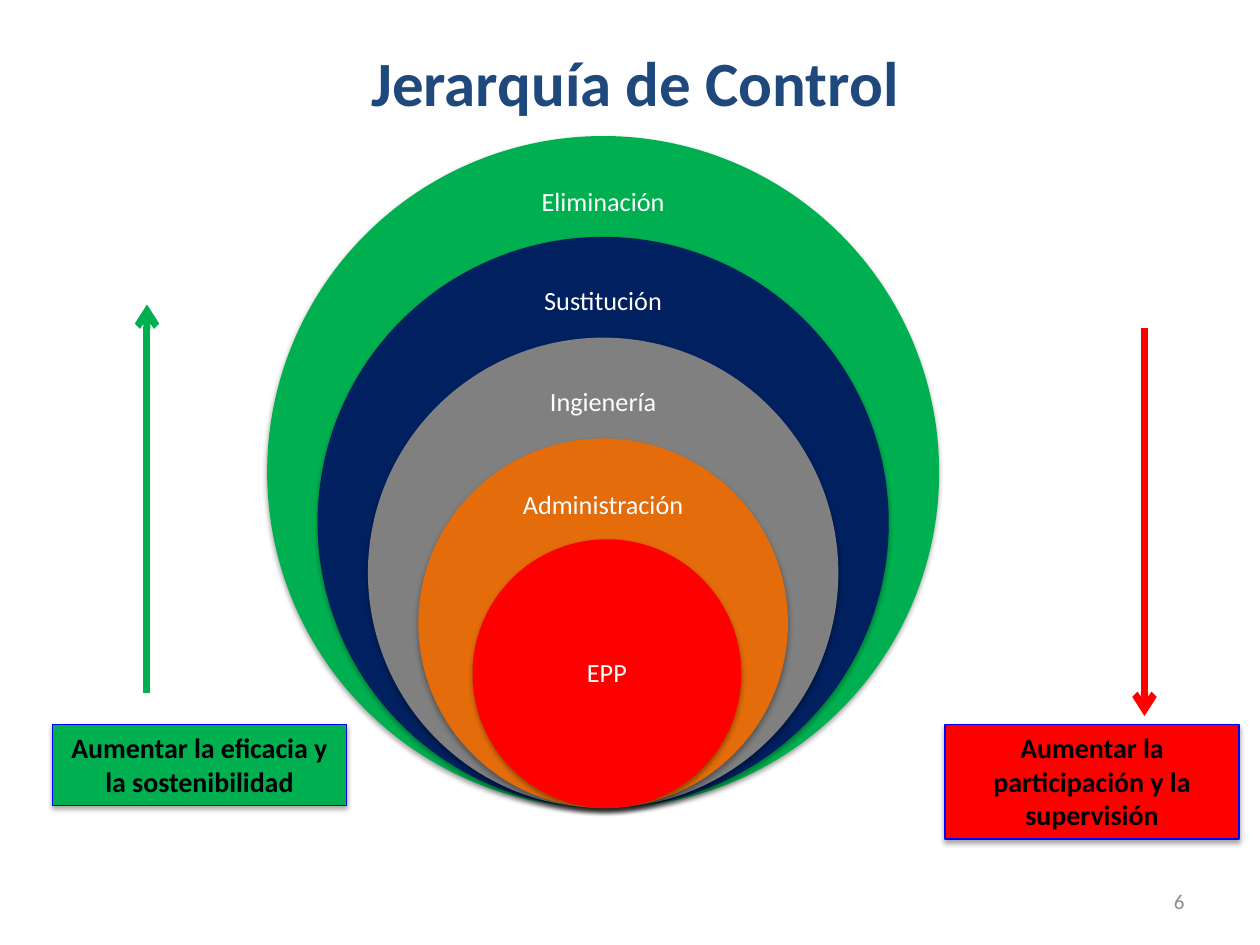
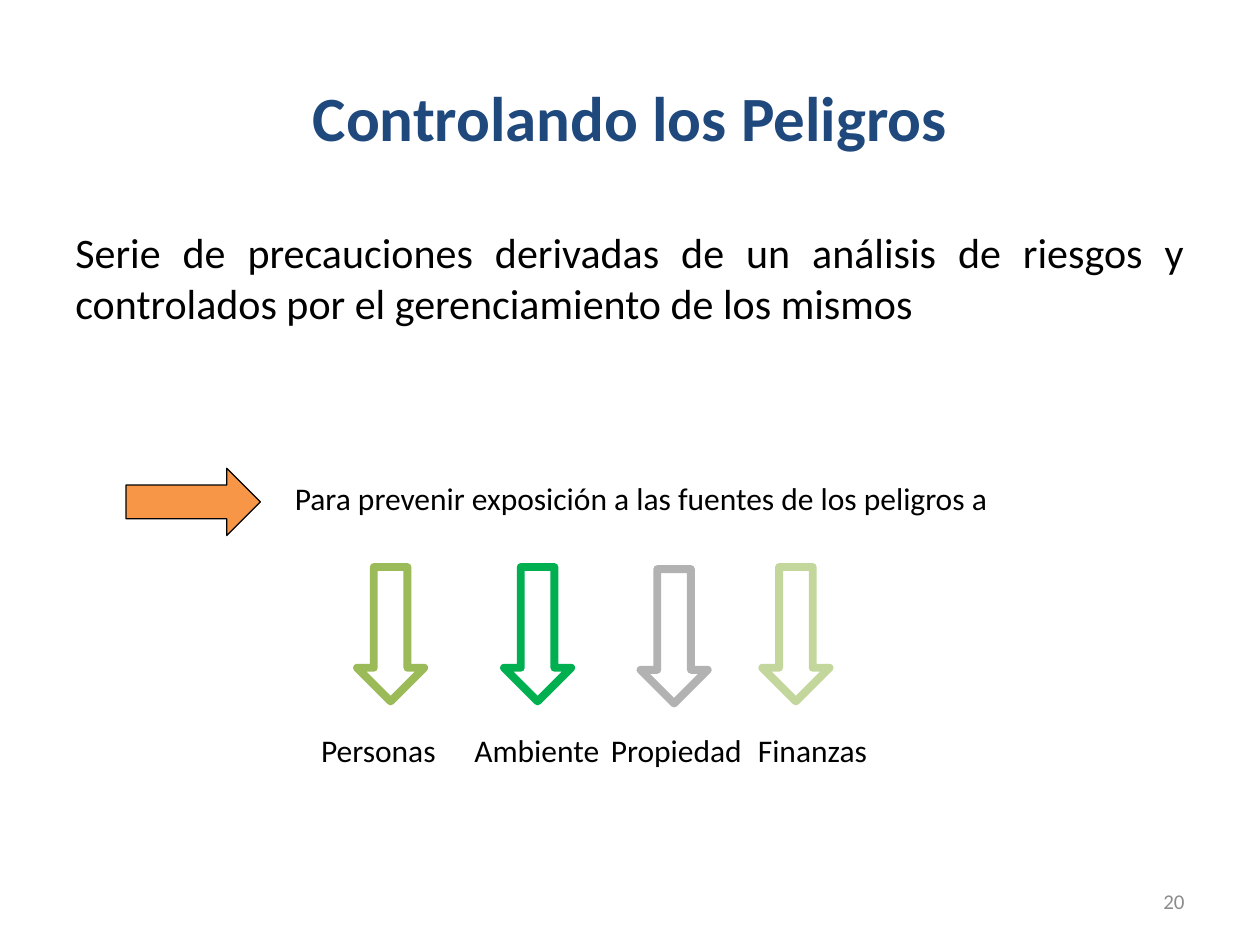
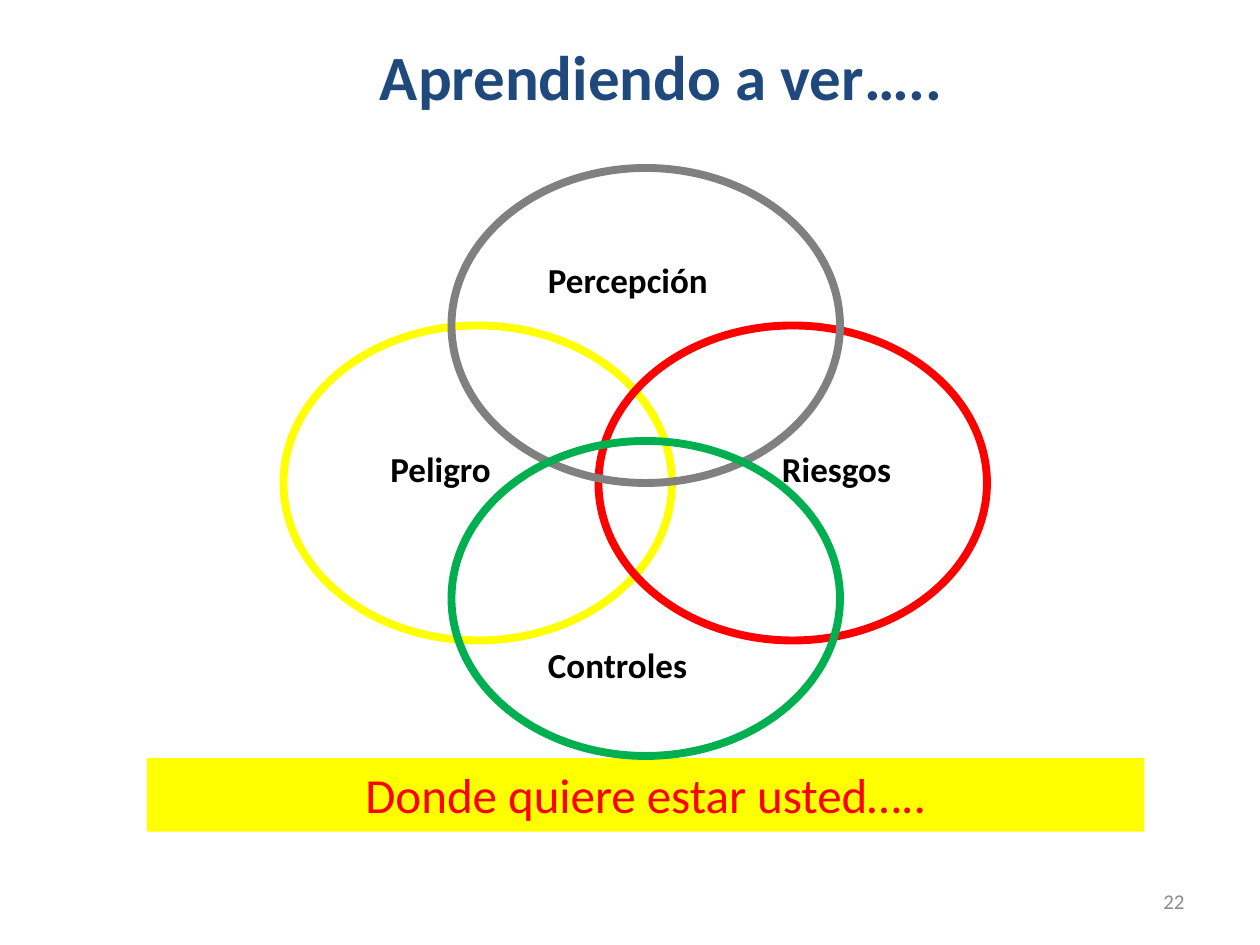
from lxml import etree
from pptx import Presentation
from pptx.dml.color import RGBColor
from pptx.enum.shapes import MSO_CONNECTOR, MSO_SHAPE as Shape
from pptx.enum.text import MSO_ANCHOR as Anchor, MSO_AUTO_SIZE as Fit, PP_ALIGN as Align
from pptx.oxml import parse_xml
from pptx.oxml.ns import nsdecls, qn
from pptx.util import Inches, Pt

NAVY_TITLE = RGBColor(0x1F, 0x49, 0x7D)
BLACK = RGBColor(0x00, 0x00, 0x00)
WHITE = RGBColor(0xFF, 0xFF, 0xFF)
GREEN = RGBColor(0x00, 0xB0, 0x50)
RED = RGBColor(0xFF, 0x00, 0x00)
YELLOW = RGBColor(0xFF, 0xFF, 0x00)
GRAY = RGBColor(0x80, 0x80, 0x80)
NAVY = RGBColor(0x00, 0x20, 0x60)
DARK_ORANGE = RGBColor(0xE4, 0x6C, 0x0A)
ORANGE = RGBColor(0xF7, 0x96, 0x46)
BLUE = RGBColor(0x00, 0x00, 0xFF)
OLIVE = RGBColor(0x9B, 0xBB, 0x59)
PALE_OLIVE = RGBColor(0xC3, 0xD6, 0x9B)
SILVER = RGBColor(0xB2, 0xB2, 0xB2)
NUMBER_GRAY = RGBColor(0x8C, 0x8C, 0x8C)

FONT = "Calibri"
COLUMNS = 120
CELL = Inches(10) // COLUMNS
SHADOW = (
    f'<a:outerShdw {nsdecls("a")} blurRad="{Pt(3.1)}" dist="{Pt(1.8)}" dir="5400000" rotWithShape="0">'
    '<a:srgbClr val="000000"><a:alpha val="35000"/></a:srgbClr></a:outerShdw>'
)


def draw(page, kind, bounds, fill=None, line=None, weight=0.75, shadow=False):
    left, top, width, height = [int(cells * CELL) for cells in bounds]
    if kind is None:
        return page.shapes.add_textbox(left, top, width, height)
    shape = page.shapes.add_shape(kind, left, top, width, height)
    shape.shadow.inherit = False
    if shadow:
        shape.element.spPr.find(qn("a:effectLst")).append(parse_xml(SHADOW))
    if fill is None:
        shape.fill.background()
    else:
        shape.fill.solid()
        shape.fill.fore_color.rgb = fill
    if line is None:
        shape.line.fill.background()
    else:
        shape.line.color.rgb = line
        shape.line.width = Pt(weight)
    return shape


def write(box, text, size, color=BLACK, bold=False, align=Align.LEFT, anchor=Anchor.TOP, wrap=True):
    frame = box.text_frame
    frame.word_wrap = wrap
    frame.auto_size = Fit.NONE if wrap else Fit.SHAPE_TO_FIT_TEXT
    frame.vertical_anchor = anchor
    para = frame.paragraphs[0]
    para.alignment = align
    span = para.add_run()
    span.text = text
    span.font.name = FONT
    span.font.size = Pt(size)
    span.font.bold = bold
    span.font.color.rgb = color
    return frame


deck = Presentation()
deck.slide_width = CELL * COLUMNS
deck.slide_height = CELL * 90

pages = []
for title, number, bounds in [
    ("Jerarquía de Control", "6", (3, 3, 115, 9.4)),
    ("Controlando los Peligros", "20", (6, 3.6, 108, 15)),
    ("Aprendiendo a ver…..", "22", (11, 0, 104, 14.4)),
]:
    page = deck.slides.add_slide(deck.slide_layouts[5])
    heading = page.shapes.title
    heading.left, heading.top, heading.width, heading.height = [int(cells * CELL) for cells in bounds]
    write(heading, title, 36, NAVY_TITLE, True, Align.CENTER, Anchor.MIDDLE)
    number_box = draw(page, None, (86, 83.4, 28, 4.8))
    write(number_box, number, 12, NUMBER_GRAY, align=Align.RIGHT, anchor=Anchor.MIDDLE)
    pages.append(page)
hierarchy, hazards, learning = pages

RINGS_BOTTOM = 76.96
RING_STEP = 9.6
for index, (name, color, center, label_width, label_drop, label_height) in enumerate([
    ("Eliminación", GREEN, 57.44, 24, 3.2, 6.4),
    ("Sustitución", NAVY, 57.44, 23.5, 3.1, 6.2),
    ("Ingienería", GRAY, 57.44, 23.2, 3.1, 6.2),
    ("Administración", DARK_ORANGE, 57.44, 19, 3.2, 6.4),
    ("EPP", RED, 57.8, 18.1, 6.4, 12.8),
]):
    diameter = 64 - RING_STEP * index
    top = RINGS_BOTTOM - diameter
    draw(hierarchy, Shape.OVAL, (center - diameter / 2, top, diameter, diameter), color, shadow=True)
    label = draw(hierarchy, None, (center - label_width / 2, top + label_drop, label_width, label_height))
    frame = write(label, name, 15, WHITE, align=Align.CENTER, anchor=Anchor.MIDDLE)
    frame.margin_left = frame.margin_right = frame.margin_top = frame.margin_bottom = Inches(0.12)
    frame.paragraphs[0].line_spacing = 0.9

for text, color, left, height, arrow_column, start_row, end_row in [
    ("Aumentar la eficacia y la sostenibilidad", GREEN, 5, 7.7, 14, 66, 29),
    ("Aumentar la participación y la supervisión", RED, 90, 10.9, 109, 31.2, 68.2),
]:
    caption = draw(hierarchy, Shape.RECTANGLE, (left, 69, 28, height), color, BLUE, shadow=True)
    write(caption, text, 16, bold=True, align=Align.CENTER)
    arrow = hierarchy.shapes.add_connector(
        MSO_CONNECTOR.STRAIGHT,
        arrow_column * CELL, int(start_row * CELL), arrow_column * CELL, int(end_row * CELL),
    )
    arrow.line.color.rgb = color
    arrow.line.width = Pt(4)
    etree.SubElement(arrow.line._get_or_add_ln(), qn("a:tailEnd"), type="arrow")
    etree.SubElement(arrow.element.spPr, qn("a:effectLst"))

definition = draw(hazards, None, (6, 21, 108, 59.4))
write(
    definition,
    "Serie de precauciones derivadas de un análisis de riesgos y controlados por el gerenciamiento de los mismos",
    24, align=Align.JUSTIFY,
)
draw(hazards, Shape.RIGHT_ARROW, (12, 44.6, 12.8, 6.4), ORANGE, BLACK)
purpose = draw(hazards, None, (26.9, 45, 72, 4.8))
write(purpose, "Para prevenir exposición a las fuentes de los peligros a", 18, wrap=False)
for name, color, arrow_left, arrow_top, label_left, label_width in [
    ("Personas", OLIVE, 34, 54, 29.4, 13.4),
    ("Ambiente", GREEN, 48, 54, 44, 14.4),
    ("Propiedad", SILVER, 61, 54.2, 57, 15),
    ("Finanzas", PALE_OLIVE, 72.6, 54, 71, 13),
]:
    draw(hazards, Shape.DOWN_ARROW, (arrow_left, arrow_top, 6.4, 12.8), line=color, weight=4.5)
    label = draw(hazards, None, (label_left, 69, label_width, 4.8))
    write(label, name, 18, wrap=False)

banner = draw(learning, Shape.RECTANGLE, (14, 72.2, 95, 7), YELLOW)
write(banner, "Donde quiere estar usted…..", 28, RED, align=Align.CENTER)
for name, color, left, top, label_left, label_top, label_width in [
    ("Peligro", YELLOW, 27, 31, 36, 42, 13.8),
    ("Riesgos", RED, 57, 31, 73.3, 42, 13),
    ("Percepción", GRAY, 43, 16, 51, 24, 20.5),
    ("Controles", GREEN, 43, 42, 51, 60.7, 18.1),
]:
    draw(learning, Shape.OVAL, (left, top, 37, 30), line=color, weight=4.5)
    label = draw(learning, None, (label_left, label_top, label_width, 5.3))
    write(label, name, 20, bold=True, wrap=False)

deck.save("out.pptx")
